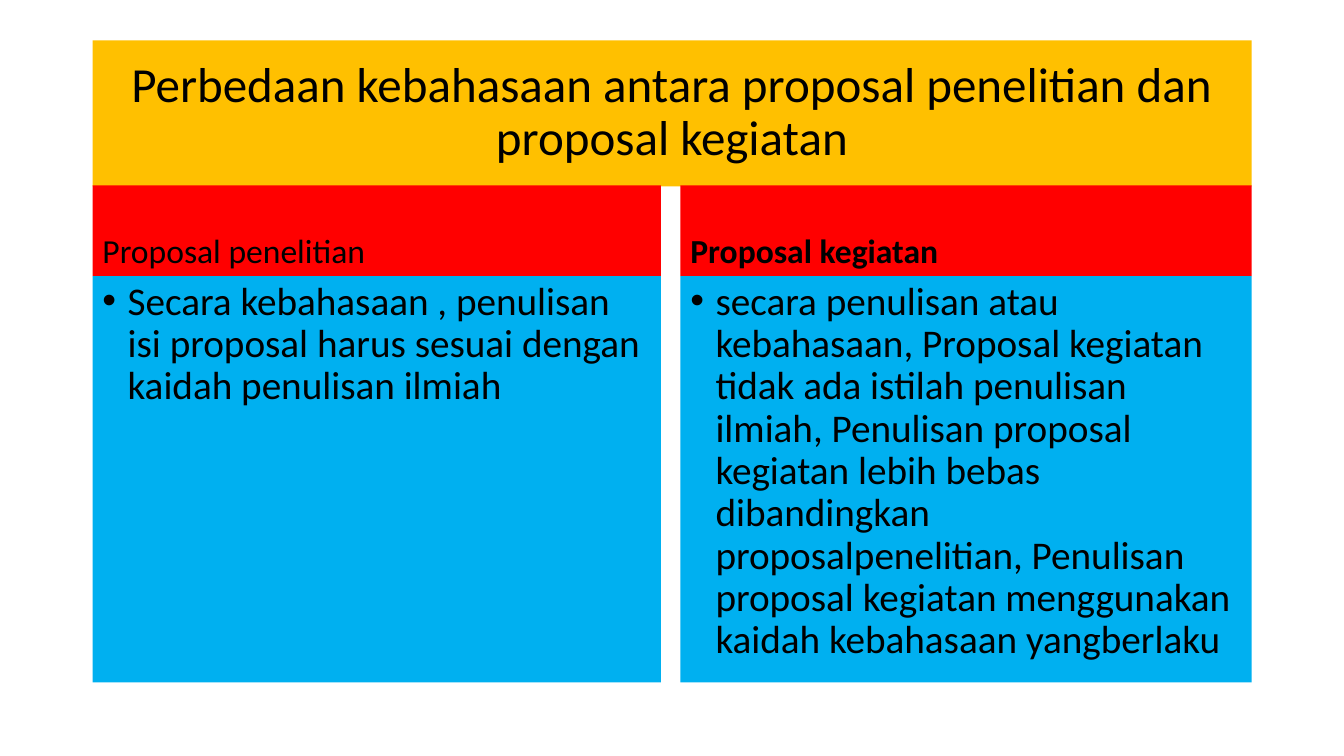
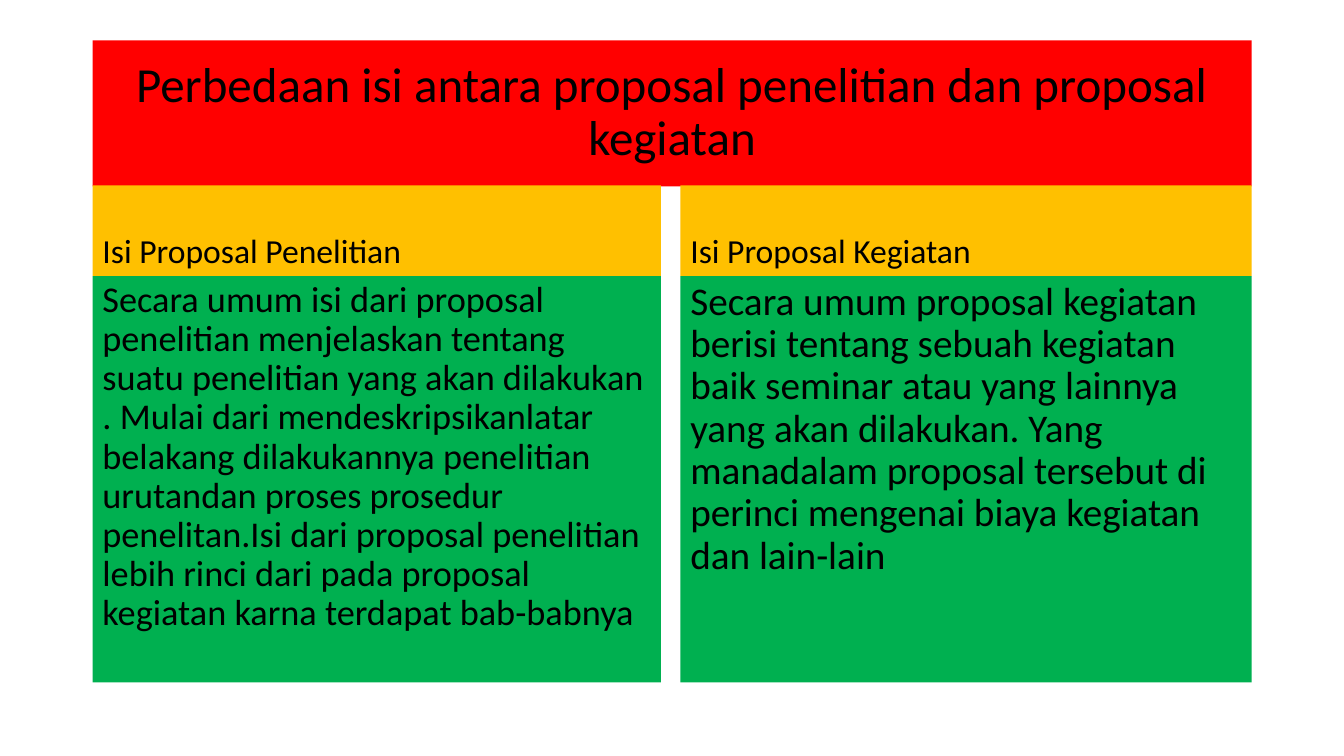
from dataclasses import dataclass
from pptx import Presentation
from pptx.dml.color import RGBColor as RGB
from pptx.enum.text import MSO_ANCHOR as Anchor, PP_ALIGN as Align
from pptx.oxml.ns import qn
from pptx.util import Pt
from lxml.etree import SubElement


@dataclass(frozen=True)
class Theme:
    font: str = "Calibri"
    ink: str = "000000"
    gold: str = "FFC000"
    red: str = "FF0000"
    blue: str = "00B0F0"
    green: str = "00B050"
    title: float = 35
    head: float = 24
    body: float = 28
    small: float = 25.9


THEME = Theme()

SLIDES = [
    {
        "title": "Perbedaan kebahasaan antara proposal penelitian dan proposal kegiatan",
        "fills": (THEME.gold, THEME.red, THEME.blue),
        "bullet": True,
        "columns": [
            {"head": "Proposal penelitian",
             "body": "Secara kebahasaan , penulisan isi proposal harus sesuai "
                     "dengan kaidah penulisan ilmiah"},
            {"head": "Proposal kegiatan", "bold": True,
             "body": "secara penulisan atau kebahasaan, Proposal kegiatan tidak "
                     "ada istilah penulisan ilmiah, Penulisan proposal kegiatan "
                     "lebih bebas dibandingkan proposalpenelitian, Penulisan "
                     "proposal kegiatan menggunakan kaidah kebahasaan yangberlaku"},
        ],
    },
    {
        "title": "Perbedaan isi antara proposal penelitian dan proposal kegiatan",
        "fills": (THEME.red, THEME.gold, THEME.green),
        "bullet": False,
        "columns": [
            {"head": "Isi Proposal Penelitian", "size": THEME.small,
             "body": "Secara umum isi dari proposal penelitian menjelaskan tentang "
                     "suatu penelitian yang akan dilakukan . Mulai dari "
                     "mendeskripsikanlatar belakang dilakukannya penelitian "
                     "urutandan proses prosedur penelitan.Isi dari proposal "
                     "penelitian lebih rinci dari pada proposal kegiatan karna "
                     "terdapat bab-babnya"},
            {"head": "Isi Proposal Kegiatan",
             "body": "Secara umum proposal kegiatan berisi tentang sebuah kegiatan "
                     "baik seminar atau yang lainnya yang akan dilakukan. Yang "
                     "manadalam proposal tersebut di perinci mengenai biaya "
                     "kegiatan dan lain-lain"},
        ],
    },
]

LEFT, WIDE = 66.1, 828
COLS = ((LEFT, 406.1), (486, 408.1))
TITLE_TOP, TITLE_HIGH = 28.8, 104.4
HEAD_TOP, HEAD_HIGH = 132.5, 64.8
BODY_TOP, BODY_HIGH = HEAD_TOP + HEAD_HIGH, 290.2
INDENT, GAP = 18, 10


def add_panel(slide, box, text, fill, size, anchor=Anchor.TOP,
              align=Align.LEFT, before=GAP, bold=False, bullet=False):
    panel = slide.shapes.add_textbox(*map(Pt, box))
    panel.fill.solid()
    panel.fill.fore_color.rgb = RGB.from_string(fill)
    frame = panel.text_frame
    frame.word_wrap = True
    frame.vertical_anchor = anchor
    para = frame.paragraphs[0]
    para.text = text
    para.alignment = align
    para.line_spacing = 0.9
    para.space_before = Pt(before)
    font = para.font
    font.name, font.size, font.bold = THEME.font, Pt(size), bold
    font.color.rgb = RGB.from_string(THEME.ink)
    if bullet:
        add_bullet(para)


def add_bullet(para):
    props = para._p.get_or_add_pPr()
    props.set("marL", str(Pt(INDENT)))
    props.set("indent", str(-Pt(INDENT)))
    face = SubElement(props, qn("a:buFont"), typeface="Arial")
    mark = SubElement(props, qn("a:buChar"), char="•")
    style = props.find(qn("a:defRPr"))
    style.addprevious(face)
    style.addprevious(mark)


def add_page(deck, page):
    slide = deck.slides.add_slide(deck.slide_layouts[6])
    top, band, base = page["fills"]
    add_panel(slide, (LEFT, TITLE_TOP, WIDE, TITLE_HIGH), page["title"], top,
              THEME.title, Anchor.MIDDLE, Align.CENTER, before=0)
    for (left, width), col in zip(COLS, page["columns"]):
        add_panel(slide, (left, HEAD_TOP, width, HEAD_HIGH), col["head"], band,
                  THEME.head, Anchor.BOTTOM, bold=col.get("bold", False))
        add_panel(slide, (left, BODY_TOP, width, BODY_HIGH), col["body"], base,
                  col.get("size", THEME.body), bullet=page["bullet"])


def main():
    deck = Presentation()
    deck.slide_width, deck.slide_height = Pt(960), Pt(540)
    for page in SLIDES:
        add_page(deck, page)
    deck.save("out.pptx")


if __name__ == "__main__":
    main()
